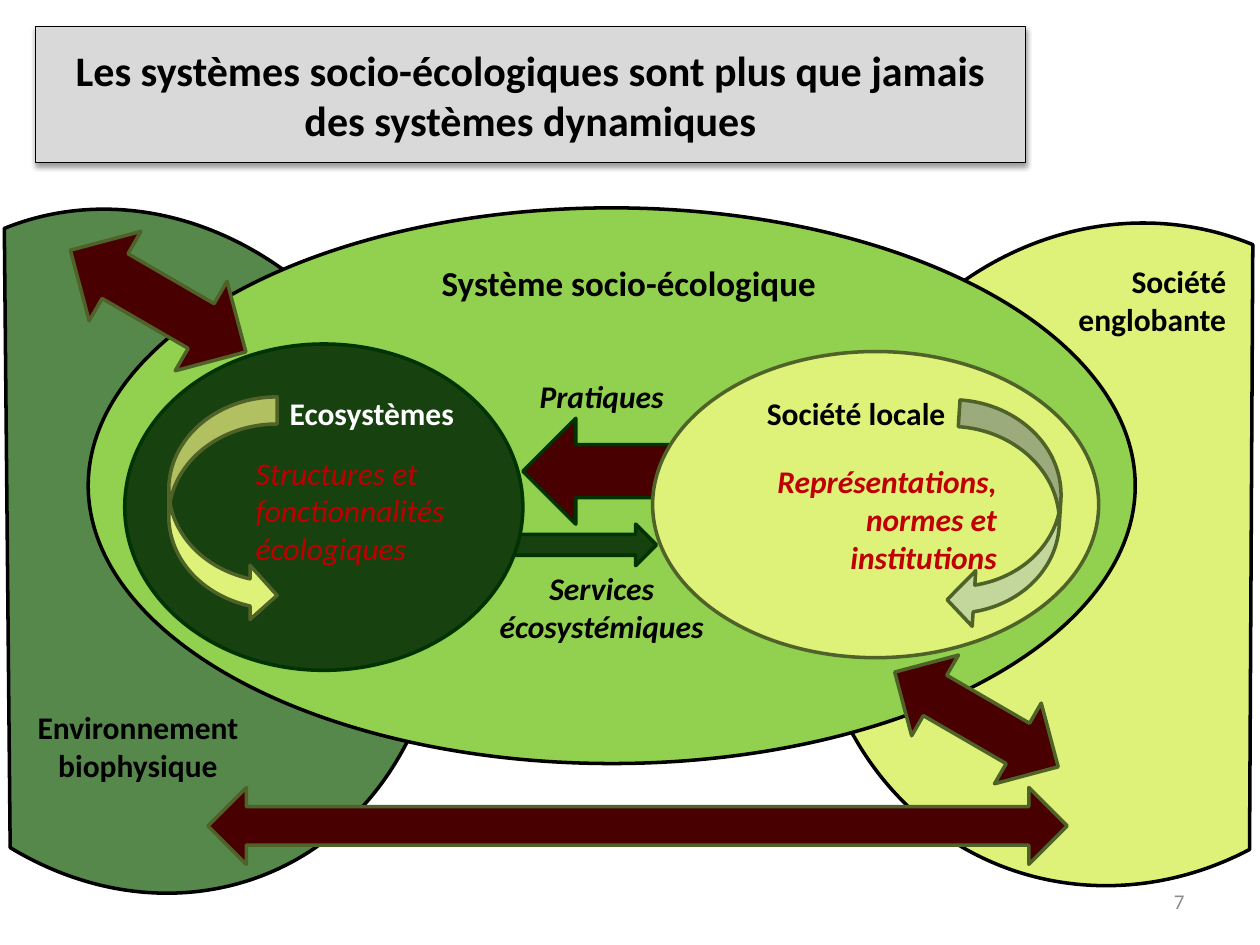
from dataclasses import dataclass

from lxml import etree
from pptx import Presentation
from pptx.dml.color import RGBColor
from pptx.enum.shapes import MSO_SHAPE as Preset
from pptx.enum.text import MSO_ANCHOR as Anchor, MSO_AUTO_SIZE as AutoSize, PP_ALIGN as Align
from pptx.oxml import parse_xml
from pptx.oxml.ns import nsdecls, qn
from pptx.util import Inches, Pt


@dataclass(frozen=True)
class Theme:
    font: str = "Calibri"
    title: int = 24
    heading: int = 20
    label: int = 18
    number: int = 12
    black: str = "000000"
    white: str = "FFFFFF"
    grey: str = "D9D9D9"
    number_grey: str = "8C8C8C"
    red: str = "C00000"
    maroon: str = "480000"
    lime: str = "92D050"
    pale: str = "DEF27A"
    sage: str = "C3D69B"
    moss: str = "56874B"
    forest: str = "17410F"
    forest_edge: str = "003300"
    olive_edge: str = "4F6228"


theme = Theme()
COLUMNS, ROWS = 100, 75

deck = Presentation()
deck.slide_width, deck.slide_height = Inches(10), Inches(7.5)
page = deck.slides.add_slide(deck.slide_layouts.get_by_name("Title Only"))


def on_grid(left, top, width, height):
    """Turn columns and rows of the grid into slide lengths."""
    column, row = deck.slide_width / COLUMNS, deck.slide_height / ROWS
    return [round(n) for n in (left * column, top * row, width * column, height * row)]


def write(frame, text, size, color, align, bold=True, italic=False):
    frame.word_wrap = True
    frame.text = text
    for para in frame.paragraphs:
        para.alignment = align
        font = para.font
        font.name, font.size, font.bold, font.italic = theme.font, Pt(size), bold, italic
        font.color.rgb = RGBColor.from_string(color)


# Title: a rounded grey panel with a soft shadow below
title = page.shapes.title
title.left, title.top, title.width, title.height = on_grid(2.8, 2.1, 78.6, 10.8)
title_props = title.element.spPr
title_props.find(qn("a:xfrm")).addnext(
    parse_xml(f'<a:prstGeom {nsdecls("a")} prst="roundRect"><a:avLst/></a:prstGeom>'))
title.fill.solid()
title.fill.fore_color.rgb = RGBColor.from_string(theme.grey)
title.line.color.rgb = RGBColor.from_string(theme.black)
title.line.width = Pt(0.75)
effects = etree.SubElement(title_props, qn("a:effectLst"))
shadow = etree.SubElement(effects, qn("a:outerShdw"), blurRad=str(Pt(3.1)), dist=str(Pt(1.6)),
                          dir="5400000", rotWithShape="0")
shade = etree.SubElement(shadow, qn("a:srgbClr"), val=theme.black)
etree.SubElement(shade, qn("a:alpha"), val="38000")
write(title.text_frame, "Les systèmes socio-écologiques sont plus que jamais des systèmes dynamiques",
      theme.title, theme.black, Align.CENTER)
title.text_frame.auto_size = AutoSize.NONE
title.text_frame.vertical_anchor = Anchor.MIDDLE

# Systems and flows, back to front: preset, place, fill, edge, rotation, flipped, adjustments
diagram = [
    (Preset.CHORD, (64.8, 17.4, 48.9, 53.2), theme.pale, theme.black, 22.5, False, (26.73, 162)),
    (Preset.CHORD, (-13.1, 16.1, 47.7, 55.3), theme.moss, theme.black, 337.9, True, ()),
    (Preset.OVAL, (7, 16.5, 83.1, 44.1), theme.lime, theme.black, 0, False, ()),
    (Preset.RIGHT_ARROW, (32.5, 41.6, 19.6, 3.3), theme.forest, theme.forest_edge, 0, False, ()),
    (Preset.LEFT_ARROW, (41.5, 33.2, 25.7, 8.4), theme.maroon, theme.forest_edge, 0, False, ()),
    (Preset.OVAL, (9.9, 27.3, 31.6, 25.9), theme.forest, theme.forest_edge, 0, False, ()),
    (Preset.OVAL, (51.8, 27.9, 35.4, 24.3), theme.pale, theme.olive_edge, 0, False, ()),
    (Preset.CURVED_LEFT_ARROW, (75.6, 32, 8.5, 18.1), theme.sage, theme.olive_edge, 3.7, False,
     (0.25, 0.52, 0.25)),
    (Preset.CURVED_LEFT_ARROW, (13.4, 31.5, 8.6, 17.9), theme.pale, theme.olive_edge, 0, True, ()),
    (Preset.LEFT_RIGHT_ARROW, (4.5, 19.8, 16.1, 8.2), theme.maroon, theme.olive_edge, 30.1, False, ()),
    (Preset.LEFT_RIGHT_ARROW, (70, 53.4, 15, 7.4), theme.maroon, theme.olive_edge, 30.1, False, ()),
    (Preset.LEFT_RIGHT_ARROW, (16.5, 62.5, 68.2, 6.1), theme.maroon, theme.olive_edge, 0, False, ()),
]
for preset, place, fill, edge, rotation, flipped, adjustments in diagram:
    shape = page.shapes.add_shape(preset, *on_grid(*place))
    shape.shadow.inherit = False
    shape.fill.solid()
    shape.fill.fore_color.rgb = RGBColor.from_string(fill)
    shape.line.color.rgb = RGBColor.from_string(edge)
    shape.line.width = Pt(2)
    shape.rotation = rotation
    for index, value in enumerate(adjustments):
        shape.adjustments[index] = value
    if flipped:
        shape.element.spPr.find(qn("a:xfrm")).set("flipH", "1")

# Labels: text, place, size, colour, alignment, bold, italic
labels = [
    ("Système socio-écologique", (30.2, 20.3, 39.4, 4.2), theme.heading, theme.black, Align.CENTER, True, False),
    ("Société englobante", (81.4, 20.3, 16.9, 6.8), theme.label, theme.black, Align.RIGHT, True, False),
    ("Environnement biophysique", (-0.4, 55.7, 22.7, 6.8), theme.label, theme.black, Align.CENTER, True, False),
    ("Ecosystèmes", (22, 30.8, 17.5, 3.9), theme.label, theme.white, Align.LEFT, True, False),
    ("Structures et fonctionnalités écologiques", (19.3, 35.5, 18.9, 10.1), theme.label, theme.red,
     Align.LEFT, False, True),
    ("Société locale", (57.4, 30.8, 21.1, 3.9), theme.label, theme.black, Align.CENTER, True, False),
    ("Représentations, normes et institutions", (57.4, 36.2, 22.7, 10.1), theme.label, theme.red,
     Align.RIGHT, True, True),
    ("Pratiques", (35.7, 29.4, 24.1, 3.9), theme.label, theme.black, Align.CENTER, True, True),
    ("Services\nécosystémiques", (36.5, 44.7, 22.5, 6.8), theme.label, theme.black, Align.CENTER, True, True),
    ("7", (71.7, 69.5, 23.3, 4), theme.number, theme.number_grey, Align.RIGHT, False, False),
]
for text, place, *style in labels:
    box = page.shapes.add_textbox(*on_grid(*place))
    write(box.text_frame, text, *style)
box.text_frame.vertical_anchor = Anchor.MIDDLE  # the page number, last in the list

deck.save("out.pptx")
